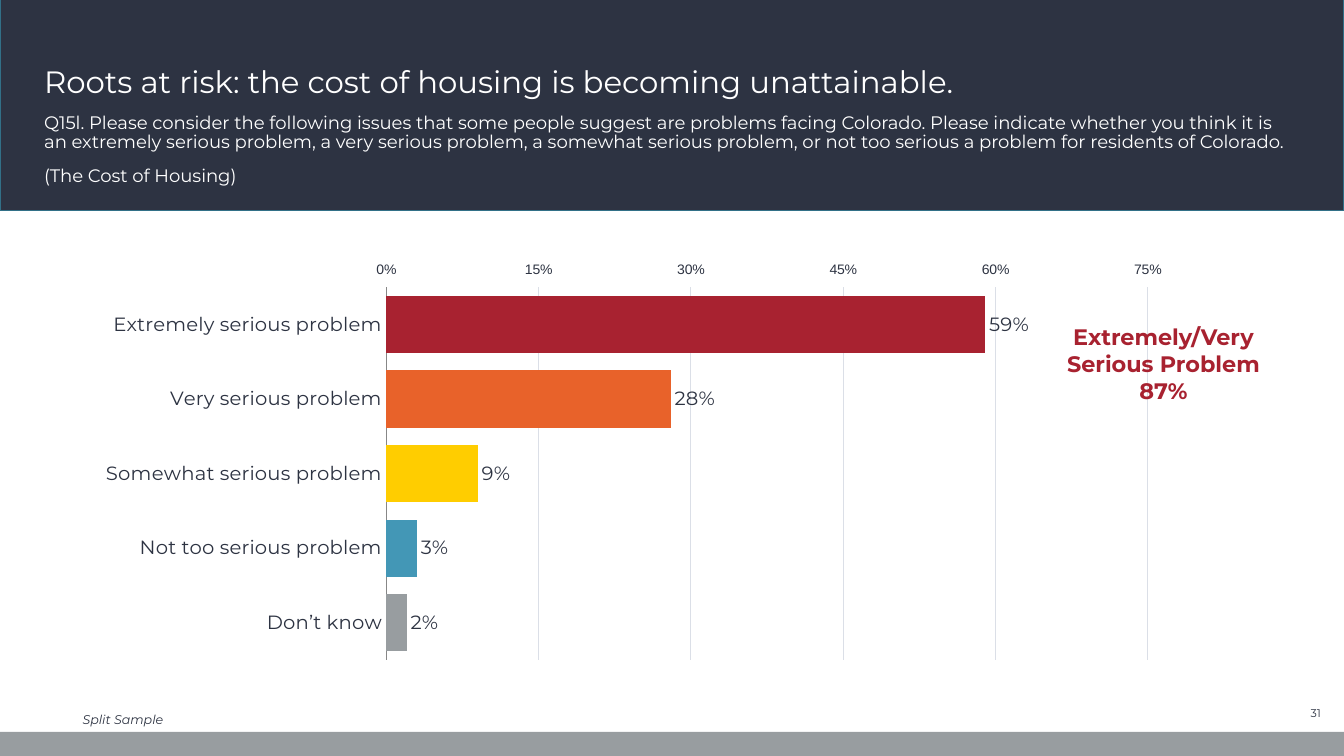
from lxml.etree import SubElement
from pptx import Presentation
from pptx.chart.data import CategoryChartData
from pptx.dml.color import RGBColor
from pptx.enum.chart import XL_AXIS_CROSSES, XL_CHART_TYPE, XL_LABEL_POSITION, XL_TICK_MARK
from pptx.enum.shapes import MSO_SHAPE
from pptx.enum.text import MSO_ANCHOR, PP_ALIGN
from pptx.oxml.ns import qn
from pptx.util import Inches, Pt

THEME = {
    "navy": RGBColor.from_string("2D3342"),
    "teal": RGBColor.from_string("327087"),
    "gray": RGBColor.from_string("989DA0"),
    "white": RGBColor.from_string("FFFFFF"),
    "red": RGBColor.from_string("A82230"),
    "orange": RGBColor.from_string("E8622A"),
    "yellow": RGBColor.from_string("FFCD00"),
    "blue": RGBColor.from_string("4397B6"),
    "grid": RGBColor.from_string("DBDFE7"),
    "axis": RGBColor.from_string("878787"),
    "font": "Montserrat",
    "axis_font": "Arial",
    "title": Pt(22),
    "callout": Pt(16),
    "label": Pt(14),
    "question": Pt(12.9),
    "tick": Pt(10),
    "note": Pt(9),
    "number": Pt(8),
}


def style_font(font, size, color, **extra):
    values = {"name": THEME["font"], "size": THEME[size], **extra}
    for name, value in values.items():
        setattr(font, name, value)
    font.color.rgb = THEME[color]


def add_text(area, lines, size, color, anchor, align=PP_ALIGN.LEFT, spacing=0.9, **extra):
    box = slide.shapes.add_textbox(*map(Inches, area))
    frame = box.text_frame
    frame.word_wrap = True
    frame.vertical_anchor = anchor
    for index, line in enumerate(lines):
        para = frame.add_paragraph() if index else frame.paragraphs[0]
        para.text = line
        para.alignment = align
        para.line_spacing = spacing
        if index:
            para.space_before = Pt(10)
        for span in para.runs:
            style_font(span.font, size, color, **extra)


deck = Presentation()
deck.slide_width = Inches(13.33)
deck.slide_height = Inches(7.5)
slide = deck.slides.add_slide(deck.slide_layouts[6])

for top, height, fill, line in [(-0.03, 2.12, "navy", "teal"), (7.26, 0.24, "gray", None)]:
    band = slide.shapes.add_shape(
        MSO_SHAPE.RECTANGLE, Inches(0), Inches(top), deck.slide_width, Inches(height)
    )
    band.shadow.inherit = False
    band.fill.solid()
    band.fill.fore_color.rgb = THEME[fill]
    if line:
        band.line.color.rgb = THEME[line]
        band.line.width = Pt(1)
    else:
        band.line.fill.background()

add_text((12.42, 6.95, 0.78, 0.24), ["31"], "number", "navy",
         MSO_ANCHOR.MIDDLE, PP_ALIGN.RIGHT, 1.0)
add_text((0.34, 0.07, 12.64, 0.97),
         ["Roots at risk: the cost of housing is becoming unattainable."],
         "title", "white", MSO_ANCHOR.BOTTOM)
add_text((0.34, 1.08, 12.64, 0.92),
         ["Q15l. Please consider the following issues that some people suggest are problems "
          "facing Colorado. Please indicate whether you think it is an extremely serious problem, "
          "a very serious problem, a somewhat serious problem, or not too serious a problem "
          "for residents of Colorado.",
          "(The Cost of Housing)"],
         "question", "white", MSO_ANCHOR.TOP)
add_text((0.72, 6.95, 11.69, 0.31), ["Split Sample"], "note", "navy",
         MSO_ANCHOR.BOTTOM, italic=True)

answers = [
    ("Extremely serious problem", 0.59, "red"),
    ("Very serious problem", 0.28, "orange"),
    ("Somewhat serious problem", 0.09, "yellow"),
    ("Not too serious problem", 0.03, "blue"),
    ("Don’t know", 0.02, "gray"),
]
names, shares, colors = zip(*answers)
data = CategoryChartData(number_format="0%")
data.categories = names
data.add_series("Series 1", shares)
chart = slide.shapes.add_chart(
    XL_CHART_TYPE.BAR_CLUSTERED, Inches(0.5), Inches(2.6), Inches(11.53), Inches(4.2), data
).chart
chart.has_legend = False
chart.has_title = False
style_font(chart.font, "tick", "navy")

plot = chart.plots[0]
plot.vary_by_categories = False
plot.gap_width = 30
series = plot.series[0]
for index, color in enumerate(colors):
    fill = series.points[index].format.fill
    fill.solid()
    fill.fore_color.rgb = THEME[color]

plot.has_data_labels = True
labels = plot.data_labels
label_format = {
    "show_value": True,
    "number_format": "0%",
    "number_format_is_linked": False,
    "position": XL_LABEL_POSITION.OUTSIDE_END,
}
for name, value in label_format.items():
    setattr(labels, name, value)
style_font(labels.font, "label", "navy")

categories = chart.category_axis
category_format = {
    "reverse_order": True,
    "crosses": XL_AXIS_CROSSES.MAXIMUM,
    "major_tick_mark": XL_TICK_MARK.NONE,
    "minor_tick_mark": XL_TICK_MARK.NONE,
}
for name, value in category_format.items():
    setattr(categories, name, value)
style_font(categories.tick_labels.font, "label", "navy")
categories.format.line.color.rgb = THEME["axis"]
categories.format.line.width = Pt(0.75)

percent = chart.value_axis
percent_format = {
    "minimum_scale": 0,
    "maximum_scale": 0.75,
    "major_unit": 0.15,
    "has_major_gridlines": True,
    "major_tick_mark": XL_TICK_MARK.OUTSIDE,
}
for name, value in percent_format.items():
    setattr(percent, name, value)
percent.tick_labels.number_format = "0%"
percent.tick_labels.number_format_is_linked = False
style_font(percent.tick_labels.font, "tick", "navy", name=THEME["axis_font"])
percent.format.line.fill.background()
percent.major_gridlines.format.line.color.rgb = THEME["grid"]
percent.major_gridlines.format.line.width = Pt(0.75)

plot_area = chart.element.find(".//" + qn("c:plotArea"))
layout = plot_area.find(qn("c:layout"))
if layout is None:
    layout = SubElement(plot_area, qn("c:layout"))
    plot_area.insert(0, layout)
manual = SubElement(layout, qn("c:manualLayout"))
plot_layout = {
    "layoutTarget": "inner", "xMode": "edge", "yMode": "edge",
    "x": 0.29, "y": 0.04, "w": 0.65, "h": 0.9,
}
plot_layout.update(x=0.289, y=0.043, w=0.655, h=0.896)
for name, value in plot_layout.items():
    SubElement(manual, qn("c:" + name)).set("val", str(value))

add_text((10.48, 3.16, 2.12, 0.91), ["Extremely/Very Serious Problem\v87%"],
         "callout", "red", MSO_ANCHOR.TOP, PP_ALIGN.CENTER, 1.0, bold=True)

deck.save("out.pptx")
